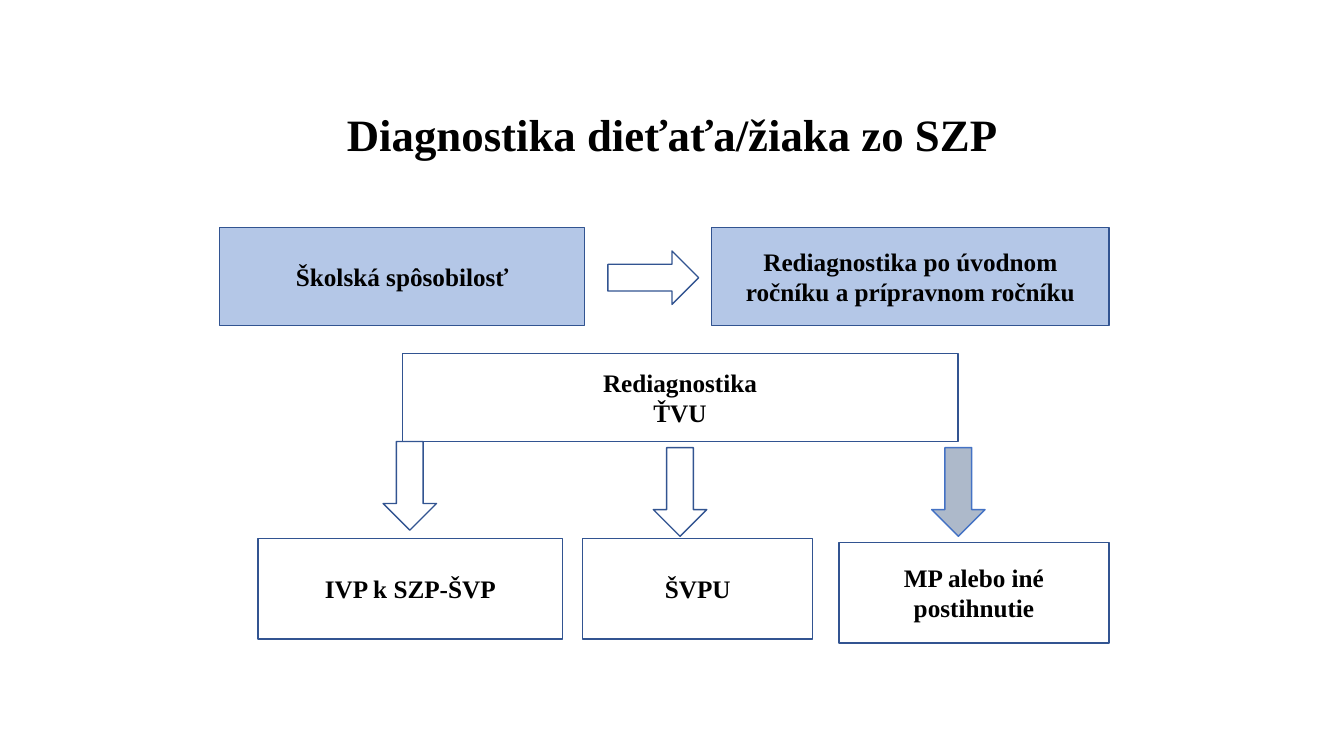
from pptx import Presentation
from pptx.dml.color import RGBColor
from pptx.enum.shapes import MSO_SHAPE as Preset
from pptx.enum.text import MSO_ANCHOR as Anchor, PP_ALIGN as Align
from pptx.util import Inches, Pt

CELL = 0.1  # inches per grid column and row
WHITE, PALE_BLUE, GREY_BLUE = "FFFFFF", "B4C7E7", "ADB9CA"
OUTLINE, BRIGHT_OUTLINE, INK = "325491", "4472C4", "000000"


def colour(hex_code):
    return RGBColor.from_string(hex_code)


def cells(count):
    return Inches(count * CELL)


class DiagramSlide:
    """Style and drawing methods; places are (column, row, columns, rows)."""

    font = "Times New Roman"
    title_size = 32
    box_size = 18

    def __init__(self, slide):
        self.shapes = slide.shapes

    def set_label(self, frame, text, size):
        frame.text = text
        frame.word_wrap = True
        frame.vertical_anchor = Anchor.MIDDLE
        for paragraph in frame.paragraphs:
            paragraph.alignment = Align.CENTER
            for run in paragraph.runs:
                run.font.name = self.font
                run.font.size = Pt(size)
                run.font.bold = True
                run.font.color.rgb = colour(INK)

    def title(self, place, text, lowered):
        """Centre the heading below a gap of the given number of rows."""
        frame = self.shapes.add_textbox(*map(cells, place)).text_frame
        self.set_label(frame, text, self.title_size)
        frame.margin_top = cells(lowered)
        frame.paragraphs[0].line_spacing = 0.9

    def outlined(self, preset, place, fill, line):
        shape = self.shapes.add_shape(preset, *map(cells, place))
        shape.shadow.inherit = False
        shape.fill.solid()
        shape.fill.fore_color.rgb = colour(fill)
        shape.line.color.rgb = colour(line)
        shape.line.width = Pt(1)
        return shape

    def box(self, place, text, fill=WHITE):
        rectangle = self.outlined(Preset.RECTANGLE, place, fill, OUTLINE)
        self.set_label(rectangle.text_frame, text, self.box_size)

    def arrow(self, preset, place, fill=WHITE, line=OUTLINE):
        self.outlined(preset, place, fill, line)


def main():
    deck = Presentation()
    deck.slide_width, deck.slide_height = Inches(13.33), Inches(7.5)
    diagram = DiagramSlide(deck.slides.add_slide(deck.slide_layouts[6]))

    diagram.title((9.2, 4, 115, 14.5), "Diagnostika dieťaťa/žiaka zo SZP", 5.1)

    assessment_row, assessment_height = 22.6, 9.7
    for column, width, text in (
        (21.8, 36.2, "Školská spôsobilosť"),
        (70.6, 39.4, "Rediagnostika po úvodnom ročníku a prípravnom ročníku"),
    ):
        place = (column, assessment_row, width, assessment_height)
        diagram.box(place, text, PALE_BLUE)
    diagram.arrow(Preset.RIGHT_ARROW, (60.3, 24.9, 9, 5.3))

    diagram.box((39.9, 35.1, 55.1, 8.7), "Rediagnostika\nŤVU")

    for column, row, fill, line in (
        (38, 43.8, WHITE, OUTLINE),
        (64.8, 44.4, WHITE, OUTLINE),
        (92.4, 44.4, GREY_BLUE, BRIGHT_OUTLINE),
    ):
        diagram.arrow(Preset.DOWN_ARROW, (column, row, 5.3, 8.8), fill, line)

    for column, row, width, outcome in (
        (25.6, 53.4, 30.2, "IVP k SZP-ŠVP"),
        (57.8, 53.4, 22.8, "ŠVPU"),
        (83.2, 53.8, 26.8, "MP alebo iné postihnutie"),
    ):
        diagram.box((column, row, width, 10), outcome)

    deck.save("out.pptx")


if __name__ == "__main__":
    main()
